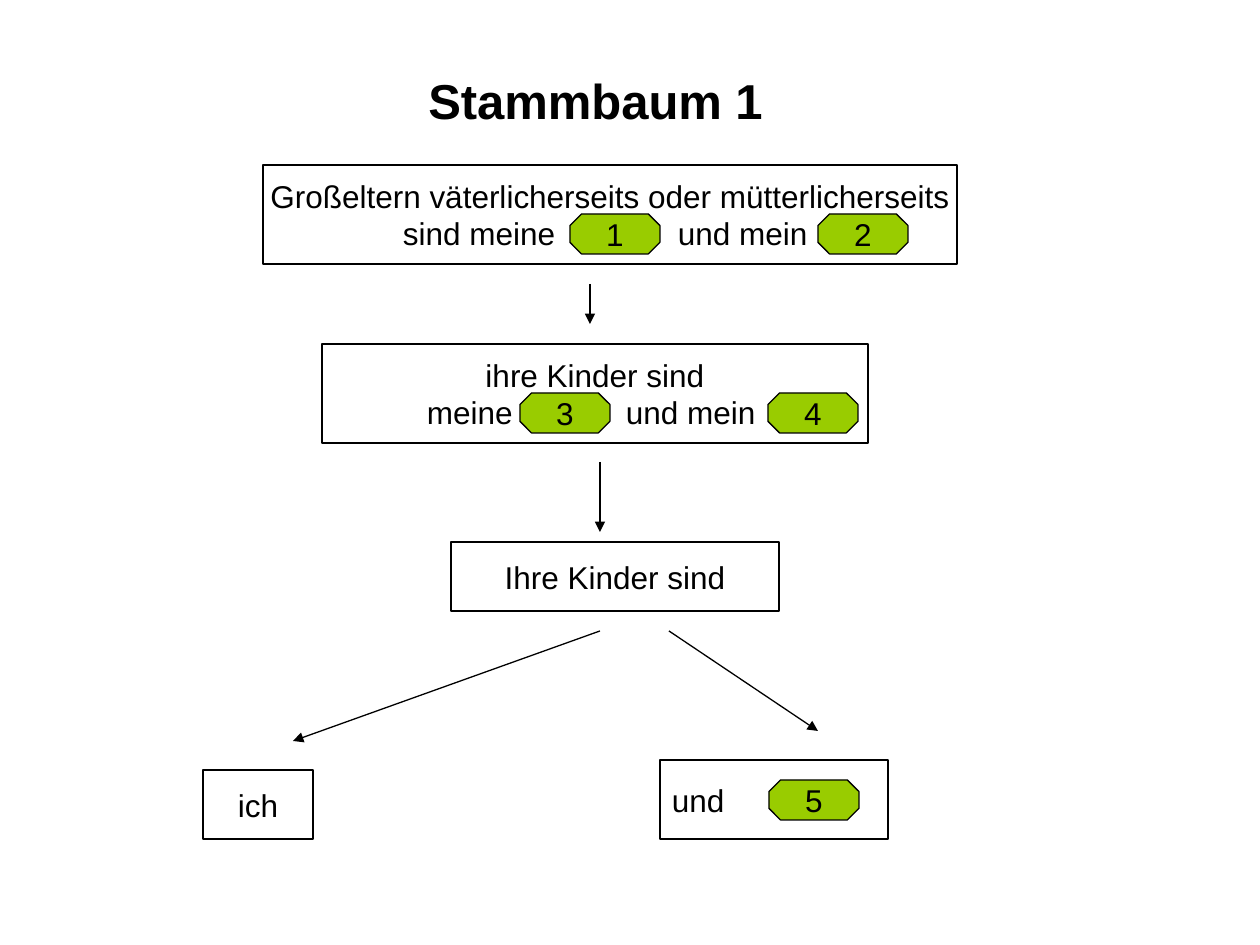
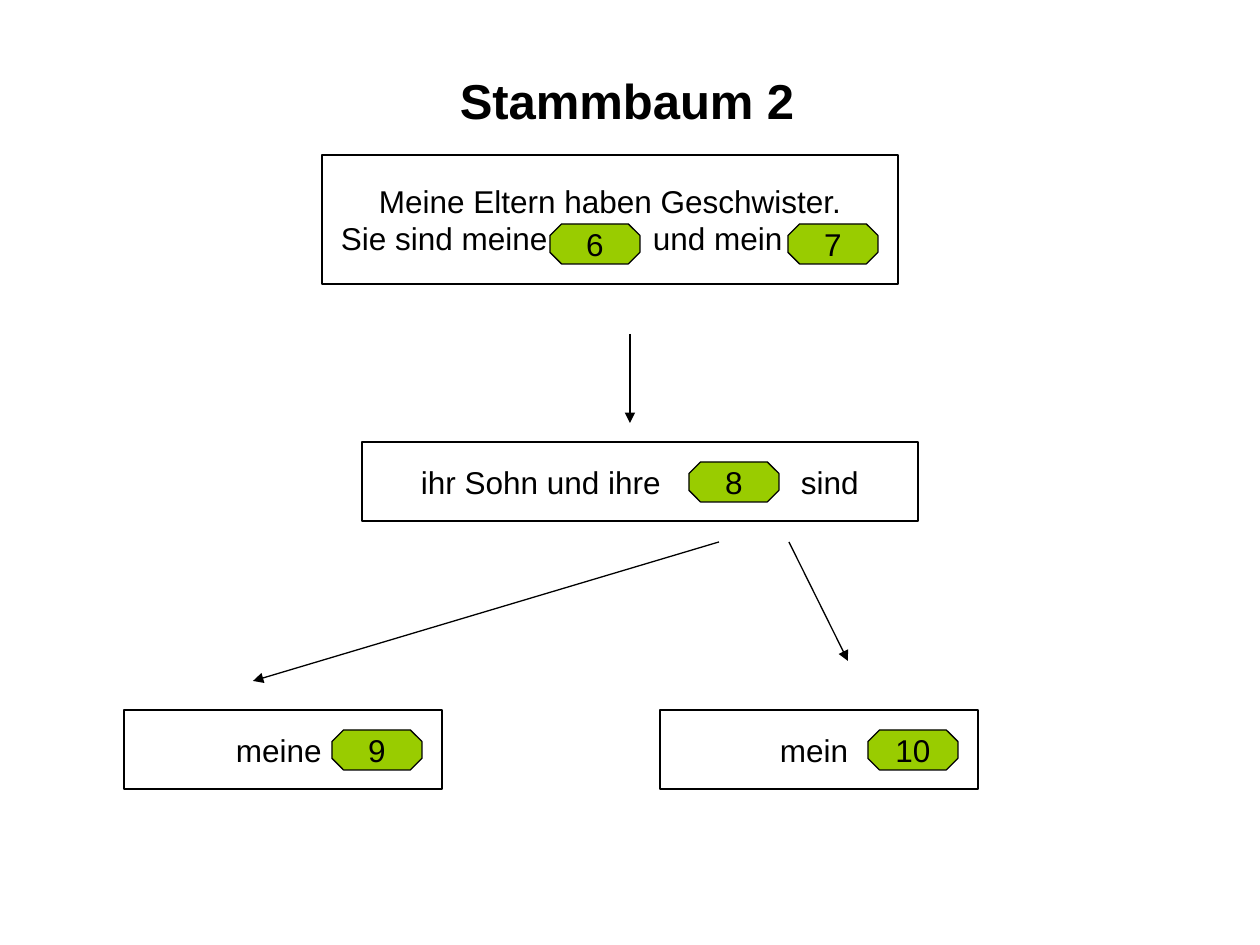
import pptx
import pptx.dml.color
import pptx.enum.shapes
import pptx.enum.text
import pptx.oxml
import pptx.oxml.ns
import pptx.util
from lxml import etree

PX = 914400 // 126
SLIDE_SIZE = (1260, 945)
ANSWER_SIZE = (90, 40)
LINE_WIDTH = pptx.util.Pt(0.75)
COLOURS = {"ink": "000000", "paper": "FFFFFF", "answer": "99CC00"}
TITLE_FONT = {"name": "Arial", "size": pptx.util.Pt(28), "bold": True}
BODY_FONT = {"name": "Arial", "size": pptx.util.Pt(18), "bold": False}
FRAME = {
    "margin_left": 0,
    "margin_right": 0,
    "word_wrap": True,
    "auto_size": pptx.enum.text.MSO_AUTO_SIZE.NONE,
    "vertical_anchor": pptx.enum.text.MSO_ANCHOR.MIDDLE,
}
ALIGN = pptx.enum.text.PP_ALIGN
SHAPES = pptx.enum.shapes.MSO_SHAPE

# A line is either a centred string or a list of (offset in the box, words).
# Answers are (number, left, top) in the box.
TREES = [
    {
        "title": ("Stammbaum 1", (392, 45, 407, 110)),
        "generations": [
            ((263, 165, 694, 99),
             ["Großeltern väterlicherseits oder mütterlicherseits",
              [(140, "sind meine"), (415, "und mein")]],
             [(1, 307, 49), (2, 555, 49)]),
            ((322, 344, 546, 99),
             ["ihre Kinder sind", [(105, "meine"), (304, "und mein")]],
             [(3, 198, 49), (4, 446, 49)]),
            ((451, 542, 328, 69), ["Ihre Kinder sind"], []),
            ((203, 770, 110, 69), ["ich"], []),
            ((660, 760, 228, 79), [[(12, "und")]], [(5, 109, 20)]),
        ],
        "descents": [
            (590, 284, 590, 324),
            (600, 462, 600, 532),
            (600, 631, 293, 741),
            (669, 631, 818, 731),
        ],
    },
    {
        "title": ("Stammbaum 2", (412, 45, 430, 110)),
        "generations": [
            ((322, 155, 576, 129),
             ["Meine Eltern haben Geschwister.",
              [(19, "Sie sind meine"), (331, "und mein")]],
             [(6, 228, 69), (7, 466, 69)]),
            ((362, 442, 556, 79),
             [[(59, "ihr Sohn und ihre"), (439, "sind")]],
             [(8, 327, 20)]),
            ((124, 710, 318, 79), [[(112, "meine")]], [(9, 208, 20)]),
            ((660, 710, 318, 79), [[(120, "mein")]], [(10, 208, 20)]),
        ],
        "descents": [
            (630, 334, 630, 423),
            (719, 542, 253, 681),
            (789, 542, 848, 661),
        ],
    },
]


def emu(lengths):
    return [length * PX for length in lengths]


def colour(name):
    return pptx.dml.color.RGBColor.from_string(COLOURS[name])


def apply_format(target, values):
    for attribute, value in values.items():
        setattr(target, attribute, value)


def write(paragraph, words, font, align):
    run = paragraph.add_run()
    run.text = words
    apply_format(run.font, font)
    run.font.color.rgb = colour("ink")
    paragraph.alignment = align


def set_tabs(paragraph, offsets):
    properties = paragraph._p.get_or_add_pPr()
    tabs = etree.SubElement(properties, pptx.oxml.ns.qn("a:tabLst"))
    for offset in offsets:
        etree.SubElement(tabs, pptx.oxml.ns.qn("a:tab"),
                         pos=str(offset * PX), algn="l")


def add_panel(slide, kind, box, fill):
    panel = slide.shapes.add_shape(kind, *emu(box))
    panel.shadow.inherit = False
    panel.fill.solid()
    panel.fill.fore_color.rgb = colour(fill)
    panel.line.color.rgb = colour("ink")
    panel.line.width = LINE_WIDTH
    apply_format(panel.text_frame, FRAME)
    return panel


def add_answer(slide, number, left, top):
    answer = add_panel(slide, SHAPES.OCTAGON, (left, top, *ANSWER_SIZE), "answer")
    answer.adjustments[0] = 0.29
    write(answer.text_frame.paragraphs[0], str(number), BODY_FONT, ALIGN.CENTER)


def add_generation(slide, box, lines, answers):
    """Add a framed sentence whose gaps hold the numbered answers."""
    frame = add_panel(slide, SHAPES.RECTANGLE, box, "paper").text_frame
    for index, line in enumerate(lines):
        paragraph = frame.add_paragraph() if index else frame.paragraphs[0]
        if isinstance(line, str):
            write(paragraph, line, BODY_FONT, ALIGN.CENTER)
        else:
            words = "".join("\t" + part for _, part in line)
            write(paragraph, words, BODY_FONT, ALIGN.LEFT)
            set_tabs(paragraph, [offset for offset, _ in line])
    for number, left, top in answers:
        add_answer(slide, number, box[0] + left, box[1] + top)


def add_descent(slide, ends):
    """Add an arrow from one generation to the next."""
    arrow = slide.shapes.add_connector(
        pptx.enum.shapes.MSO_CONNECTOR.STRAIGHT, *emu(ends))
    arrow.line.color.rgb = colour("ink")
    arrow.line.width = LINE_WIDTH
    outline = arrow.line._get_or_add_ln()
    etree.SubElement(outline, pptx.oxml.ns.qn("a:tailEnd"), type="triangle")
    etree.SubElement(arrow._element.spPr, pptx.oxml.ns.qn("a:effectLst"))


def add_title(slide, words, box):
    title = slide.shapes.title
    apply_format(title, dict(zip(("left", "top", "width", "height"), emu(box))))
    apply_format(title.text_frame, FRAME)
    write(title.text_frame.paragraphs[0], words, TITLE_FONT, ALIGN.CENTER)


def add_tree(deck, tree):
    slide = deck.slides.add_slide(deck.slide_layouts.get_by_name("Title Only"))
    add_title(slide, *tree["title"])
    for generation in tree["generations"]:
        add_generation(slide, *generation)
    for ends in tree["descents"]:
        add_descent(slide, ends)


def main():
    deck = pptx.Presentation()
    deck.slide_width, deck.slide_height = emu(SLIDE_SIZE)
    for tree in TREES:
        add_tree(deck, tree)
    deck.save("out.pptx")


if __name__ == "__main__":
    main()
